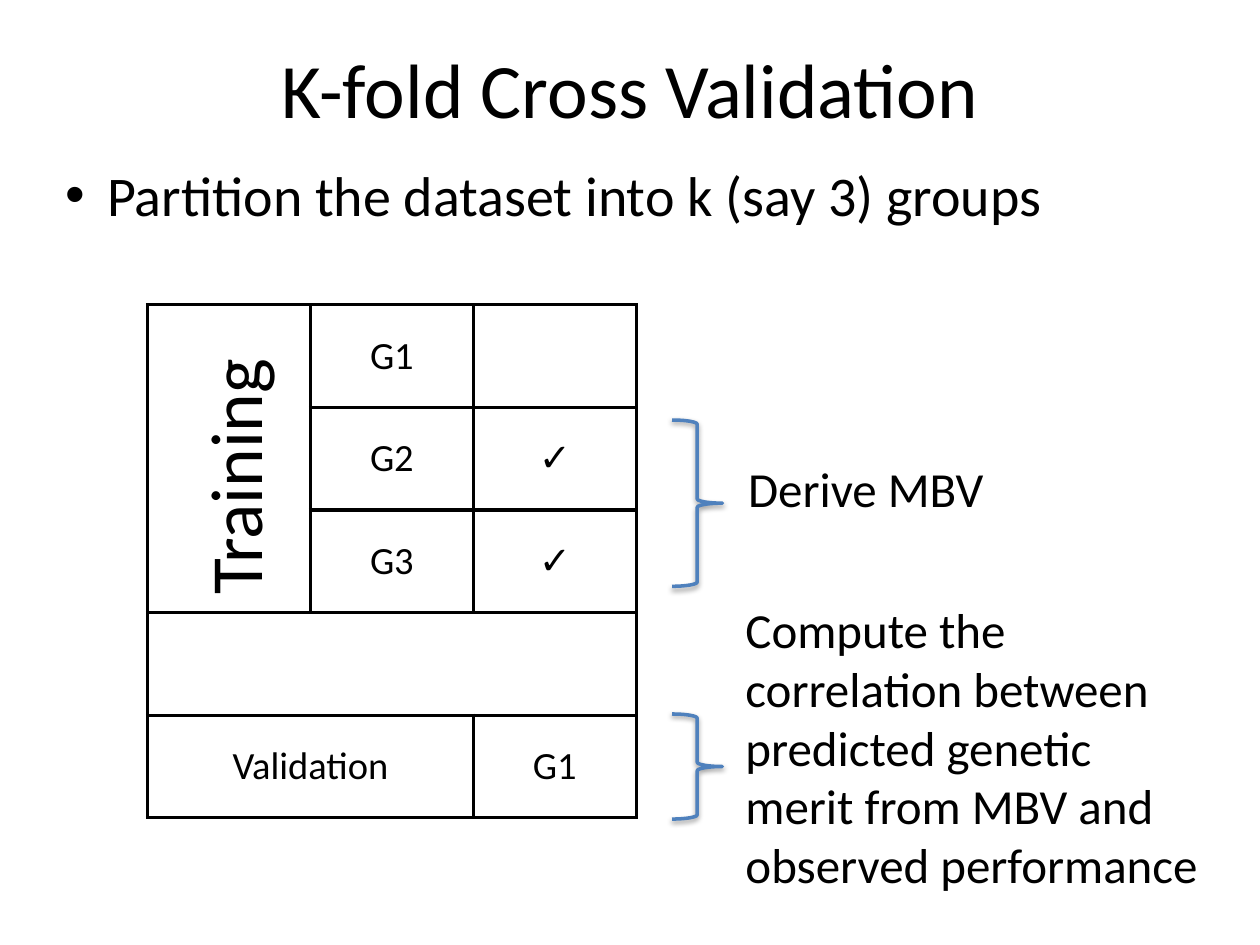
from dataclasses import dataclass

from lxml.etree import SubElement
from pptx import Presentation
from pptx.dml.color import RGBColor
from pptx.enum.shapes import MSO_SHAPE as Preset
from pptx.enum.text import MSO_ANCHOR as Anchor, MSO_AUTO_SIZE as AutoSize, PP_ALIGN as Align
from pptx.oxml.ns import qn
from pptx.slide import Slide
from pptx.table import _Cell as Cell
from pptx.text.text import TextFrame
from pptx.util import Pt


@dataclass(frozen=True)
class Theme:
    font: str = "Calibri"
    ink: RGBColor = RGBColor(0, 0, 0)
    accent: RGBColor = RGBColor(0x4F, 0x81, 0xBD)
    title: int = 44
    body: int = 32
    heading: int = 42
    label: int = 28
    cell: int = 22
    line: int = 2


@dataclass(frozen=True)
class Box:
    left: float
    top: float
    width: float
    height: float

    def lengths(self) -> tuple:
        return Pt(self.left), Pt(self.top), Pt(self.width), Pt(self.height)


@dataclass(frozen=True)
class Label:
    lines: tuple[str, ...]
    box: Box
    size: int
    inset: tuple[float, float] = (13.5, 3.6)
    rotation: int = 0


@dataclass(frozen=True)
class GridEntry:
    row: int
    column: int
    wording: str = ""
    row_span: int = 1
    column_span: int = 1


THEME = Theme()
GRID = Box(84.24, 174.24, 279.36, 293)
ROWS, COLUMNS = 5, 3
ENTRIES = (
    GridEntry(0, 0, row_span=3),
    GridEntry(0, 1, "G1"),
    GridEntry(1, 1, "G2"),
    GridEntry(1, 2, "✓"),
    GridEntry(2, 1, "G3"),
    GridEntry(2, 2, "✓"),
    GridEntry(3, 0, column_span=3),
    GridEntry(4, 0, "Validation", column_span=2),
    GridEntry(4, 2, "G1"),
)
LABELS = (
    Label(("Training",), Box(65.5, 240.5, 142, 57), THEME.heading, (0, 0), 270),
    Label(
        ("Compute the", "correlation between", "predicted genetic",
         "merit from MBV and", "observed performance"),
        Box(412.5, 339, 290, 177), THEME.label,
    ),
    Label(("Derive MBV",), Box(414, 258.5, 165, 41), THEME.label),
)
BRACES = (Box(384, 240, 28.8, 95), Box(384, 408, 28.8, 60))


def write(frame: TextFrame, *lines: str, size: int, align: Align = Align.LEFT) -> None:
    for index, line in enumerate(lines):
        paragraph = frame.paragraphs[0] if index == 0 else frame.add_paragraph()
        paragraph.text = line
        paragraph.alignment = align
        paragraph.space_before = Pt(0)
        paragraph.font.name = THEME.font
        paragraph.font.size = Pt(size)
        paragraph.font.color.rgb = THEME.ink


def fill_placeholder(shape, box: Box, wording: str, size: int, align: Align) -> None:
    shape.left, shape.top, shape.width, shape.height = box.lengths()
    shape.text_frame.auto_size = AutoSize.NONE
    write(shape.text_frame, wording, size=size, align=align)


def draw_label(slide: Slide, label: Label) -> None:
    holder = slide.shapes.add_textbox(*label.box.lengths())
    holder.rotation = label.rotation
    frame = holder.text_frame
    frame.word_wrap = True
    horizontal, vertical = label.inset
    frame.margin_left, frame.margin_right = Pt(horizontal), Pt(0)
    frame.margin_top = frame.margin_bottom = Pt(vertical)
    write(frame, *label.lines, size=label.size)


def outline_cell(cell: Cell) -> None:
    properties = cell._tc.get_or_add_tcPr()
    for side in ("a:lnL", "a:lnR", "a:lnT", "a:lnB"):
        border = SubElement(properties, qn(side), w=str(Pt(THEME.line)))
        paint = SubElement(border, qn("a:solidFill"))
        SubElement(paint, qn("a:srgbClr"), val=str(THEME.ink))


def draw_grid(slide: Slide) -> None:
    table = slide.shapes.add_table(ROWS, COLUMNS, *GRID.lengths()).table
    table.first_row = table.horz_banding = False
    for column in table.columns:
        column.width = Pt(GRID.width / COLUMNS)
    for row in table.rows:
        row.height = Pt(GRID.height / ROWS)
    for cell in table.iter_cells():
        cell.margin_left = cell.margin_right = Pt(3)
        cell.margin_top = cell.margin_bottom = Pt(3)
        cell.vertical_anchor = Anchor.MIDDLE
        outline_cell(cell)
        cell.fill.background()
    for entry in ENTRIES:
        cell = table.cell(entry.row, entry.column)
        if entry.row_span > 1 or entry.column_span > 1:
            cell.merge(table.cell(entry.row + entry.row_span - 1,
                                  entry.column + entry.column_span - 1))
        if entry.wording:
            write(cell.text_frame, entry.wording, size=THEME.cell, align=Align.CENTER)


def draw_brace(slide: Slide, box: Box) -> None:
    brace = slide.shapes.add_shape(Preset.LEFT_BRACE, *box.lengths())
    brace.rotation = 180
    brace.fill.background()
    brace.line.color.rgb = THEME.accent
    brace.line.width = Pt(THEME.line)
    brace.shadow.inherit = False
    effects = brace._element.spPr.find(qn("a:effectLst"))
    shadow = SubElement(effects, qn("a:outerShdw"), blurRad=str(Pt(3.1)),
                        dist=str(Pt(1.6)), dir="5400000", rotWithShape="0")
    tint = SubElement(shadow, qn("a:srgbClr"), val=str(THEME.ink))
    SubElement(tint, qn("a:alpha"), val="38000")


def main() -> None:
    deck = Presentation()
    deck.slide_width, deck.slide_height = Pt(720), Pt(540)
    slide = deck.slides.add_slide(deck.slide_layouts[1])
    title, body = slide.placeholders
    fill_placeholder(title, Box(36, 5, 648, 90), "K-fold Cross Validation",
                     THEME.title, Align.CENTER)
    fill_placeholder(body, Box(30, 88, 669, 377),
                     "Partition the dataset into k (say 3) groups", THEME.body, Align.LEFT)
    bullet_indent = body.text_frame.paragraphs[0]._p.get_or_add_pPr()
    bullet_indent.set("marL", str(Pt(24)))
    bullet_indent.set("indent", str(Pt(-24)))
    draw_grid(slide)
    for label in LABELS:
        draw_label(slide, label)
    for box in BRACES:
        draw_brace(slide, box)
    deck.save("out.pptx")


if __name__ == "__main__":
    main()
